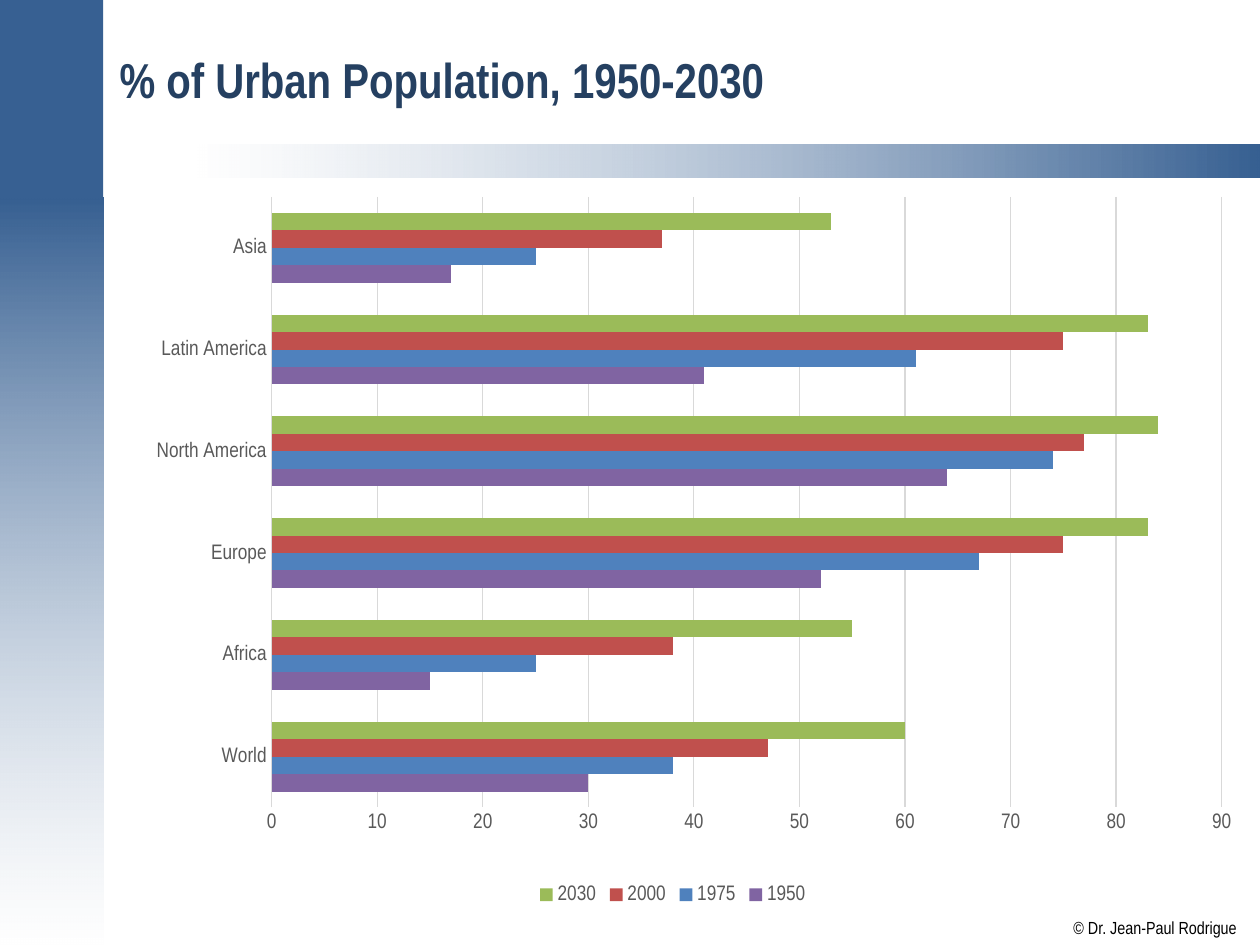
from lxml.etree import SubElement
from pptx import Presentation
from pptx.chart.data import CategoryChartData as Data
from pptx.dml.color import RGBColor as RGB
from pptx.enum.chart import XL_CHART_TYPE as Kind, XL_LEGEND_POSITION as Side
from pptx.enum.chart import XL_TICK_MARK as Tick
from pptx.enum.shapes import MSO_SHAPE as Form
from pptx.enum.text import MSO_ANCHOR as Anchor
from pptx.oxml import parse_xml
from pptx.oxml.ns import nsdecls, qn
from pptx.util import Inches, Pt

# Content
TITLE = "% of Urban Population, 1950-2030"
CREDIT = "© Dr. Jean-Paul Rodrigue"
AREAS = ["World", "Africa", "Europe", "North America", "Latin America", "Asia"]
YEARS = [
    ("1950", [30, 15, 52, 64, 41, 17], "8064A2"),
    ("1975", [38, 25, 67, 74, 61, 25], "4F81BD"),
    ("2000", [47, 38, 75, 77, 75, 37], "C0504D"),
    ("2030", [60, 55, 83, 84, 83, 53], "9BBB59"),
]
PLOT = {"x": 0.147, "y": 0.023, "w": 0.836, "h": 0.837}

THEME = {
    "font": "Arial Narrow",
    "blue": "376092", "white": "FFFFFF", "navy": "254061",
    "black": "000000", "gray": "595959", "grid": "D9D9D9",
    "title": 28, "label": 12, "small": 10,
}


def color(name):
    return RGB.from_string(THEME[name])


def style(font, size, tone, bold=False):
    font.name, font.size, font.bold = THEME["font"], Pt(THEME[size]), bold
    font.color.rgb = color(tone)


def band(slide, box, stops=None, angle=0):
    """Add a blue block, or a fade through (colour, opacity %) stops."""
    item = slide.shapes.add_shape(Form.RECTANGLE, *map(Inches, box))
    item.shadow.inherit = False
    item.line.fill.background()
    if not stops:
        item.fill.solid()
        item.fill.fore_color.rgb = color("blue")
        return
    item.fill.gradient()
    item.fill.gradient_angle = angle
    for stop, (tone, _) in zip(item.fill.gradient_stops, stops):
        stop.color.rgb = color(tone)
    tones = item.element.spPr.iter(qn("a:srgbClr"))
    for node, (_, part) in zip(tones, stops):
        if part < 100:
            SubElement(node, qn("a:alpha")).set("val", str(part * 1000))


def label(slide, box, text, size, tone, bold=False):
    item = slide.shapes.add_textbox(*map(Inches, box))
    frame = item.text_frame
    frame.text = text
    style(frame.paragraphs[0].runs[0].font, size, tone, bold)
    return frame


def rule(line):
    line.color.rgb = color("grid")
    line.width = Pt(0.75)


def graph(slide, box):
    data = Data()
    data.categories = AREAS
    for year, vals, _ in YEARS:
        data.add_series(year, vals)
    chart = slide.shapes.add_chart(
        Kind.BAR_CLUSTERED, *map(Inches, box), data).chart
    chart.has_title = False
    style(chart.font, "small", "black")

    # Bars
    plot = chart.plots[0]
    plot.gap_width = 182
    plot.vary_by_categories = False
    for bar, (_, _, tone) in zip(plot.series, YEARS):
        bar.format.fill.solid()
        bar.format.fill.fore_color.rgb = RGB.from_string(tone)

    # Axes
    cat, val = chart.category_axis, chart.value_axis
    for axis in (cat, val):
        axis.major_tick_mark = axis.minor_tick_mark = Tick.NONE
        style(axis.tick_labels.font, "label", "gray")
    rule(cat.format.line)
    val.format.line.fill.background()
    val.minimum_scale, val.maximum_scale, val.major_unit = 0, 90, 10
    val.has_major_gridlines = True
    rule(val.major_gridlines.format.line)

    # Legend
    chart.has_legend = True
    chart.legend.position = Side.BOTTOM
    chart.legend.include_in_layout = False
    style(chart.legend.font, "label", "gray")

    # Inner plot area
    area = chart.element.find(".//" + qn("c:plotArea"))
    for old in area.findall(qn("c:layout")):
        area.remove(old)
    modes = "".join(f'<c:{k}Mode val="edge"/>' for k in "xy")
    sizes = "".join(f'<c:{k} val="{v}"/>' for k, v in PLOT.items())
    area.insert(0, parse_xml(
        f'<c:layout {nsdecls("c")}><c:manualLayout>'
        f'<c:layoutTarget val="inner"/>{modes}{sizes}'
        '</c:manualLayout></c:layout>'))


def main():
    deck = Presentation()
    deck.slide_width, deck.slide_height = Inches(10), Inches(7.5)
    slide = deck.slides.add_slide(deck.slide_layouts[6])

    # Side and top bands
    band(slide, (-0.01, 1.57, 0.83, 5.93),
         [("blue", 100), ("white", 51)], 270)
    band(slide, (1.57, 1.15, 8.43, 0.26), [("white", 50), ("blue", 100)])
    band(slide, (-0.01, -0.01, 0.83, 1.58))

    # Credit and title
    note = label(slide, (8.52, 7.28, 1.3, 0.17), CREDIT, "small", "black")
    note.margin_left = note.margin_right = 0
    note.margin_top = note.margin_bottom = 0
    note.word_wrap = False
    head = label(slide, (0.85, 0.11, 8.98, 1.04), TITLE, "title", "navy", True)
    head.word_wrap = True
    head.vertical_anchor = Anchor.MIDDLE

    graph(slide, (0.83, 1.43, 9.02, 5.79))
    deck.save("out.pptx")


if __name__ == "__main__":
    main()
